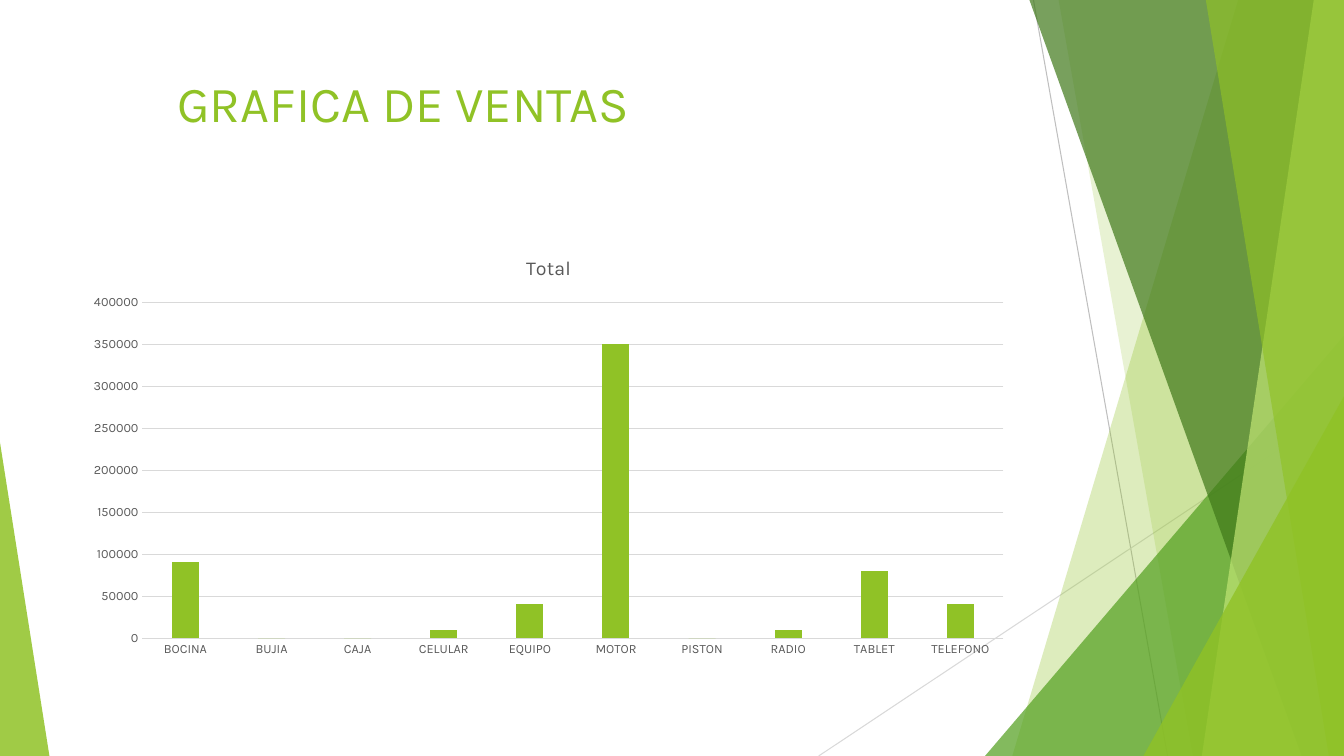
from dataclasses import dataclass

from lxml import etree
from pptx import Presentation
from pptx.chart.data import CategoryChartData
from pptx.dml.color import RGBColor
from pptx.enum import chart as ch, shapes, text
from pptx.oxml.ns import qn
from pptx.util import Inches, Pt


@dataclass(frozen=True)
class Theme:
    font: str = "Karla"
    lime: str = "90C226"
    pale_lime: str = "C0E474"
    green: str = "54A021"
    dark_green: str = "3F7819"
    grey: str = "BFBFBF"
    light_grey: str = "D9D9D9"
    label: str = "595959"
    title_size: int = 36
    chart_title_size: int = 14
    axis_size: int = 9
    line_width: float = 0.75


THEME = Theme()
WIDTH, HEIGHT = 13.33, 7.5
CONTENT_LEFT, CONTENT_WIDTH = 0.74, 9.4
SALES = {
    "BOCINA": 90000, "BUJIA": 0, "CAJA": 0, "CELULAR": 10000, "EQUIPO": 40000,
    "MOTOR": 350000, "PISTON": 0, "RADIO": 10000, "TABLET": 80000, "TELEFONO": 40000,
}


def rgb(color):
    return RGBColor.from_string(color)


def style_font(font, size, color):
    font.name = THEME.font
    font.size = Pt(size)
    font.bold = False
    font.color.rgb = rgb(color)


def style_line(line, color):
    line.color.rgb = rgb(color)
    line.width = Pt(THEME.line_width)


def paint_facet(facet, color, opacity):
    """Fill a facet with a see-through colour; opacity is in percent."""
    facet.shadow.inherit = False
    facet.line.fill.background()
    facet.fill.solid()
    facet.fill.fore_color.rgb = rgb(color)
    color_node = facet.fill._xPr.find(qn("a:solidFill"))[0]
    etree.SubElement(color_node, qn("a:alpha")).set("val", str(opacity * 1000))


def add_hairline(slide, start, end, color):
    hairline = slide.shapes.add_connector(
        shapes.MSO_CONNECTOR.STRAIGHT, *map(Inches, start + end))
    style_line(hairline.line, color)
    etree.SubElement(hairline._element.spPr, qn("a:effectLst"))


def add_band(slide, top_x, bottom_x, color, opacity):
    """Fill everything between a slanted edge and the right side of the slide."""
    corners = [(top_x, 0), (WIDTH, 0), (WIDTH, HEIGHT), (bottom_x, HEIGHT)]
    points = [(Inches(x), Inches(y)) for x, y in corners]
    outline = slide.shapes.build_freeform(*points[0])
    outline.add_line_segments(points[1:], close=True)
    paint_facet(outline.convert_to_shape(), color, opacity)


def add_corner(slide, left, top, width, apex, color, opacity):
    """Stand a triangle on the bottom edge; apex 0 is left, 1 is right."""
    corner = slide.shapes.add_shape(
        shapes.MSO_SHAPE.ISOSCELES_TRIANGLE,
        *map(Inches, (left, top, width, HEIGHT - top)))
    corner.adjustments[0] = apex
    paint_facet(corner, color, opacity)


def add_facets(slide):
    add_hairline(slide, (10.25, 0), (11.58, HEIGHT), THEME.grey)
    add_hairline(slide, (WIDTH, 4.03), (8.12, HEIGHT), THEME.light_grey)
    add_band(slide, 12.28, 10.04, THEME.lime, 30)
    add_band(slide, 10.5, 11.83, THEME.lime, 20)
    add_corner(slide, 9.77, 3.33, 3.56, 1, THEME.green, 72)
    add_band(slide, 10.21, 12.91, THEME.dark_green, 70)
    add_band(slide, 13.03, 11.92, THEME.pale_lime, 70)
    add_band(slide, 11.96, 13.18, THEME.lime, 65)
    add_corner(slide, 11.34, 3.93, 1.99, 1, THEME.lime, 80)
    add_corner(slide, 0, 4.39, 0.49, 0, THEME.lime, 85)


def set_title(slide, wording):
    title = slide.shapes.title
    title.left, title.top = Inches(CONTENT_LEFT), Inches(0.67)
    title.width, title.height = Inches(CONTENT_WIDTH), Inches(1.44)
    frame = title.text_frame
    frame.text = wording
    frame.vertical_anchor = text.MSO_ANCHOR.TOP
    heading = frame.paragraphs[0]
    heading.alignment = text.PP_ALIGN.LEFT
    heading._p.get_or_add_pPr().set("marL", str(Inches(0.92)))
    style_font(heading.font, THEME.title_size, THEME.lime)


def style_axis(axis):
    axis.major_tick_mark = axis.minor_tick_mark = ch.XL_TICK_MARK.NONE
    style_font(axis.tick_labels.font, THEME.axis_size, THEME.label)


def add_sales_chart(slide):
    sales = CategoryChartData()
    sales.categories = list(SALES)
    sales.add_series("Total", list(SALES.values()))
    chart = slide.shapes.add_chart(
        ch.XL_CHART_TYPE.COLUMN_CLUSTERED,
        *map(Inches, (CONTENT_LEFT, 2.36, CONTENT_WIDTH, 4.24)), sales).chart
    chart.font.name = THEME.font
    chart.has_legend = False
    chart.has_title = True
    heading = chart.chart_title.text_frame
    heading.text = "Total"
    style_font(heading.paragraphs[0].font, THEME.chart_title_size, THEME.label)
    chart.chart_title.include_in_layout = False

    columns = chart.plots[0]
    columns.gap_width, columns.overlap = 219, -27
    columns.vary_by_categories = False
    fill = columns.series[0].format.fill
    fill.solid()
    fill.fore_color.rgb = rgb(THEME.lime)

    products, amounts = chart.category_axis, chart.value_axis
    style_axis(products)
    style_axis(amounts)
    style_line(products.format.line, THEME.light_grey)
    amounts.format.line.fill.background()
    amounts.minimum_scale, amounts.maximum_scale = 0, 400000
    amounts.major_unit = 50000
    amounts.has_major_gridlines = True
    style_line(amounts.major_gridlines.format.line, THEME.light_grey)


def main():
    deck = Presentation()
    deck.slide_width, deck.slide_height = Inches(WIDTH), Inches(HEIGHT)
    slide = deck.slides.add_slide(deck.slide_layouts.get_by_name("Title Only"))
    add_facets(slide)
    set_title(slide, "GRAFICA DE VENTAS")
    add_sales_chart(slide)
    deck.save("out.pptx")


if __name__ == "__main__":
    main()
